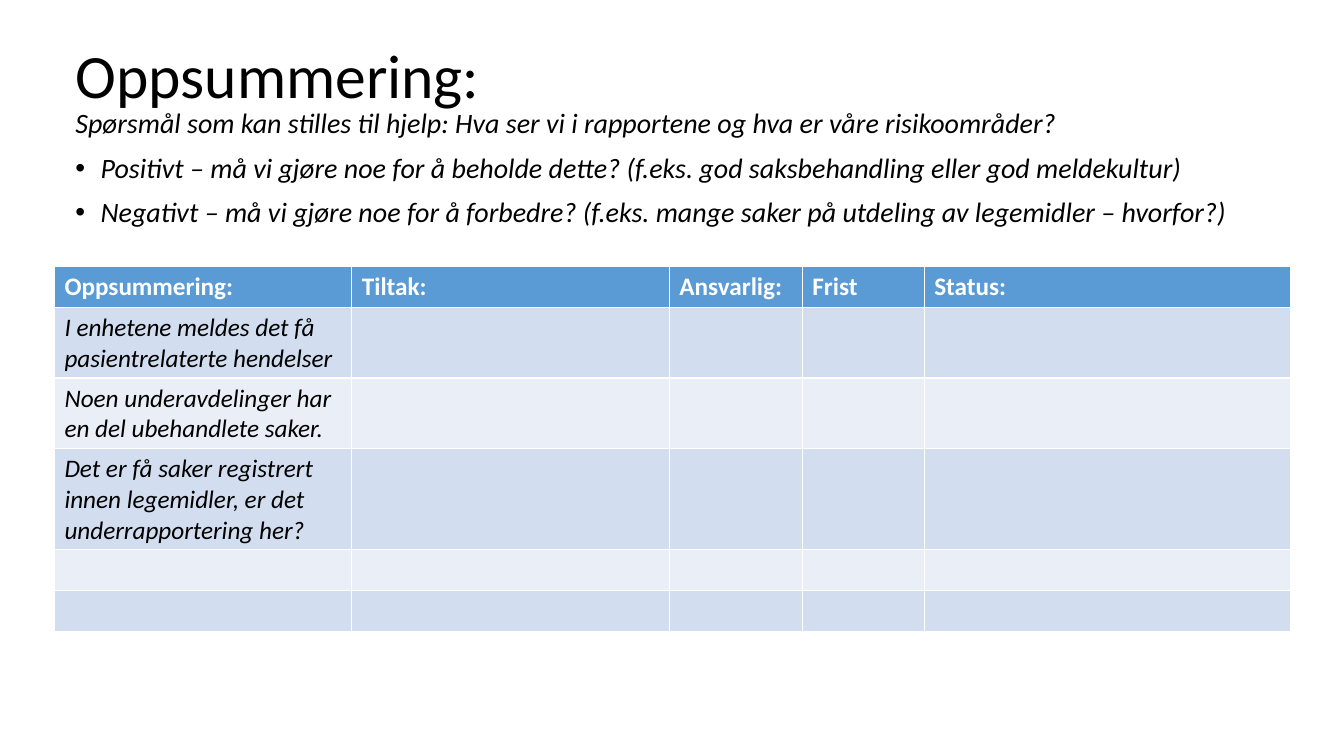
from lxml import etree
from pptx import Presentation
from pptx.dml.color import RGBColor
from pptx.enum import text
from pptx.oxml.ns import qn
from pptx.util import Pt

BLACK = RGBColor(0x00, 0x00, 0x00)
WHITE = RGBColor(0xFF, 0xFF, 0xFF)
HEADER_BLUE = RGBColor(0x5B, 0x9B, 0xD5)
BAND_DARK = RGBColor(0xD2, 0xDE, 0xEF)
BAND_LIGHT = RGBColor(0xEA, 0xEF, 0xF7)

TITLE_FONT = {"size": Pt(44), "bold": False}
QUESTION_FONT = {"size": Pt(20), "italic": True}
HEADER_FONT = {"size": Pt(18), "bold": True, "italic": False}
FINDING_FONT = {"size": Pt(18), "bold": False, "italic": True}


def format_text(paragraph, values, color):
    paragraph.font.name = "Calibri"
    paragraph.font.color.rgb = color
    for name, value in values.items():
        setattr(paragraph.font, name, value)


def place(part, left, top, width, height):
    part.left, part.top, part.width, part.height = map(Pt, (left, top, width, height))


deck = Presentation()
deck.slide_width, deck.slide_height = Pt(960), Pt(540)
slide = deck.slides.add_slide(deck.slide_layouts[5])

# Title
heading = slide.shapes.title
place(heading, 46.8, 3.6, 828, 104.4)
heading.text_frame.text = "Oppsummering:"
heading.text_frame.auto_size = text.MSO_AUTO_SIZE.NONE
heading.text_frame.vertical_anchor = text.MSO_ANCHOR.MIDDLE
heading_line = heading.text_frame.paragraphs[0]
heading_line.alignment = text.PP_ALIGN.LEFT
heading_line.line_spacing = 0.9
format_text(heading_line, TITLE_FONT, BLACK)

# Guiding questions: an introduction and two bullets
questions = slide.shapes.add_textbox(Pt(46.8), Pt(74.9), Pt(880.6), Pt(100.8)).text_frame
questions.word_wrap = True
questions.text = "\n".join([
    "Spørsmål som kan stilles til hjelp: Hva ser vi i rapportene og hva er våre risikoområder?",
    "Positivt – må vi gjøre noe for å beholde dette? (f.eks. god saksbehandling eller god meldekultur)",
    "Negativt – må vi gjøre noe for å forbedre? (f.eks. mange saker på utdeling av legemidler – hvorfor?)",
])
for index, question in enumerate(questions.paragraphs):
    question.line_spacing = 0.9
    if index > 0:
        question.space_before = Pt(10)
        properties = question._p.get_or_add_pPr()
        properties.set("marL", str(Pt(18)))
        properties.set("indent", str(-Pt(18)))
        etree.SubElement(properties, qn("a:buFont")).set("typeface", "Arial")
        etree.SubElement(properties, qn("a:buChar")).set("char", "•")
    format_text(question, QUESTION_FONT, BLACK)

# Action plan table
headers = ["Oppsummering:", "Tiltak:", "Ansvarlig:", "Frist", "Status:"]
findings = [
    "I enhetene meldes det få  pasientrelaterte hendelser",
    "Noen underavdelinger har en del ubehandlete saker.",
    "Det er få saker registrert innen legemidler, er det underrapportering her?",
    "",
    "",
]
column_widths = [212.4, 226.8, 95, 87.1, 261.4]
plan = slide.shapes.add_table(
    len(findings) + 1, len(headers), Pt(38.9), Pt(190.1), Pt(sum(column_widths)), Pt(177)
).table
for column, width in zip(plan.columns, column_widths):
    column.width = Pt(width)

rows = [headers] + [[finding] + [""] * (len(headers) - 1) for finding in findings]
for row_index, row in enumerate(rows):
    if row_index == 0:
        fill, font, color = HEADER_BLUE, HEADER_FONT, WHITE
    else:
        fill = BAND_DARK if row_index % 2 else BAND_LIGHT
        font, color = FINDING_FONT, BLACK
    for column_index, words in enumerate(row):
        cell = plan.cell(row_index, column_index)
        cell.text = words
        cell.fill.solid()
        cell.fill.fore_color.rgb = fill
        format_text(cell.text_frame.paragraphs[0], font, color)

deck.save("out.pptx")
